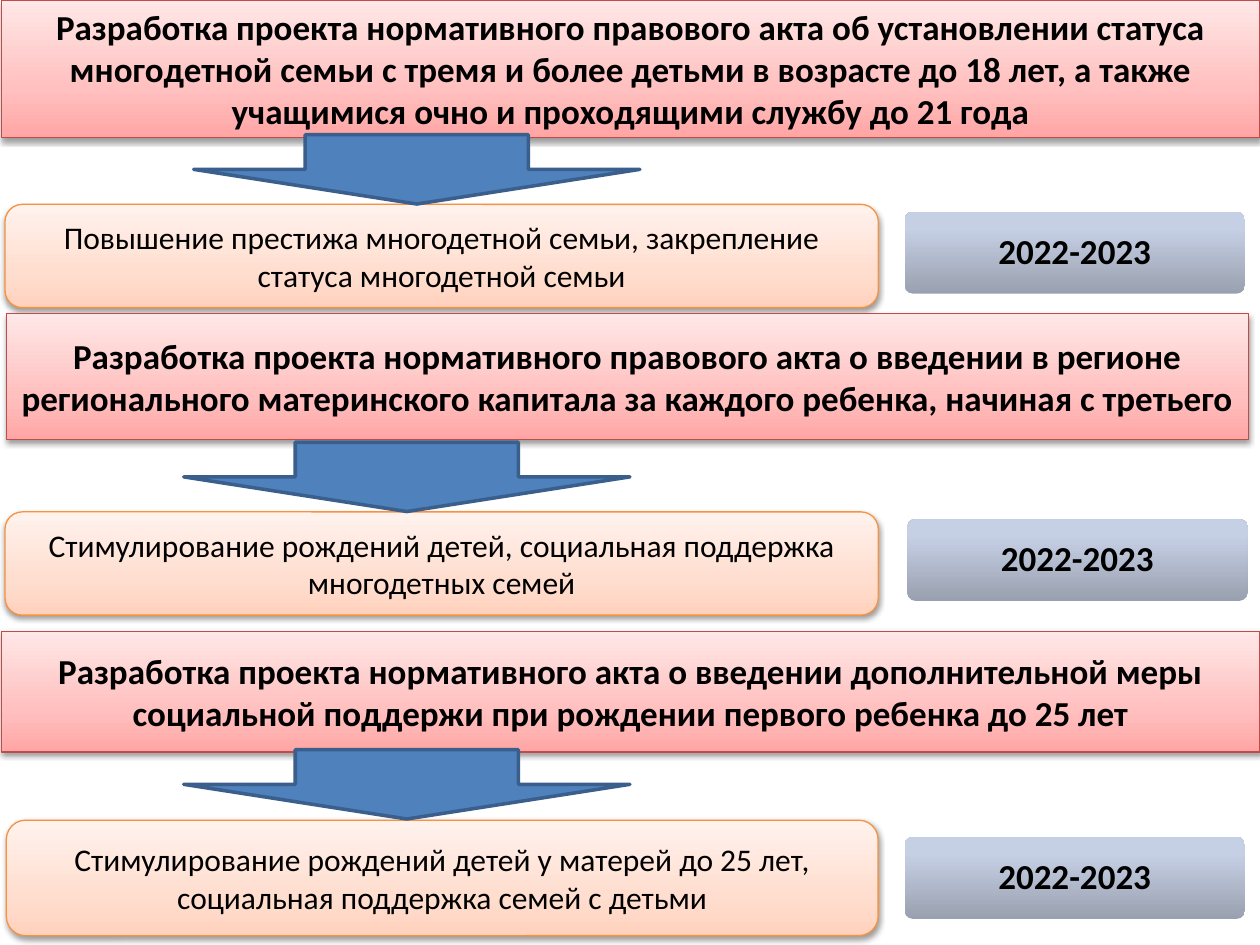
from lxml import etree
from pptx import Presentation
from pptx.dml.color import RGBColor
from pptx.enum.shapes import MSO_SHAPE
from pptx.enum.text import MSO_ANCHOR, PP_ALIGN
from pptx.oxml.ns import qn
from pptx.util import Pt

RECT = MSO_SHAPE.RECTANGLE
ROUND = MSO_SHAPE.ROUNDED_RECTANGLE
ARROW = MSO_SHAPE.DOWN_ARROW
MIDDLE = MSO_ANCHOR.MIDDLE
CENTER = PP_ALIGN.CENTER

COLORS = {"ink": "000000", "blue": "4F81BD", "navy": "3A5F8C",
          "red": "BF4C48", "orange": "F69240"}
# Gradient stops, from the bottom edge up
FADES = {
    "pink": [(0, "FFA6A5"), (35, "FFC0BF"), (100, "FFE7E7")],
    "peach": [(0, "FFD2BD"), (35, "FFDED0"), (100, "FFF2ED")],
    "steel": [(0, "99A0B0"), (80, "C6D0E4"), (100, "C6D1E6")],
}
STEP = 175.7  # distance from one arrow to the next
YEARS = "2022-2023"

# Each row: measure, its box, result, its box, left and top of the date, left of the arrow
ROWS = [
    ("Разработка проекта нормативного правового акта об установлении статуса "
     "многодетной семьи с тремя и более детьми в возрасте до 18 лет, а также "
     "учащимися очно и проходящими службу до 21 года", (0.7, 0, 719.3, 78.5),
     "Повышение престижа многодетной семьи, закрепление статуса многодетной семьи",
     (2.9, 116.8, 499, 59), (517, 121), 110.7),
    ("Разработка проекта нормативного правового акта о введении в регионе "
     "регионального материнского капитала за каждого ребенка, начиная с третьего",
     (3.6, 179.3, 709.9, 72),
     "Стимулирование рождений детей, социальная поддержка многодетных семей",
     (2.9, 292.5, 499, 59), (518.5, 296.6), 105),
    ("Разработка проекта нормативного акта о введении дополнительной меры "
     "социальной поддержи при рождении первого ребенка до 25 лет",
     (0.7, 360.7, 719.3, 69.1),
     "Стимулирование рождений детей у матерей до 25 лет, социальная поддержка "
     "семей с детьми", (3.6, 468.7, 498.2, 66), (517, 478.3), 105),
]


def write(shape, text, size=20, bold=False, color="ink", space=None):
    frame = shape.text_frame
    frame.word_wrap = True
    frame.vertical_anchor = MIDDLE
    para = frame.paragraphs[0]
    para.text = text
    para.alignment = CENTER
    para.line_spacing = space
    font = para.font
    font.name, font.size, font.bold = "Calibri", Pt(size), bold
    font.color.rgb = RGBColor.from_string(COLORS[color])


class Board:
    def __init__(self, slide):
        self.slide = slide

    def shape(self, kind, box, line=None, width=0.75):
        shape = self.slide.shapes.add_shape(kind, *map(Pt, box))
        shape.shadow.inherit = False
        if line:
            shape.line.color.rgb = RGBColor.from_string(COLORS[line])
            shape.line.width = Pt(width)
        else:
            shape.line.fill.background()
        return shape

    def fade(self, shape, name):
        shape.fill.background()
        props = shape.fill._xPr
        grad = etree.Element(qn("a:gradFill"), rotWithShape="1")
        stops = etree.SubElement(grad, qn("a:gsLst"))
        for pos, color in FADES[name]:
            stop = etree.SubElement(stops, qn("a:gs"), pos=str(pos * 1000))
            etree.SubElement(stop, qn("a:srgbClr"), val=color)
        etree.SubElement(grad, qn("a:lin"), ang="16200000", scaled="0")
        props.replace(props.find(qn("a:noFill")), grad)

    def shade(self, shape):
        list_ = shape.fill._xPr.find(qn("a:effectLst"))
        drop = etree.SubElement(list_, qn("a:outerShdw"), blurRad=str(Pt(3.1)),
                                dist=str(Pt(1.6)), dir="5400000", rotWithShape="0")
        color = etree.SubElement(drop, qn("a:srgbClr"), val=COLORS["ink"])
        etree.SubElement(color, qn("a:alpha"), val="38000")

    def bar(self, text, box):
        shape = self.shape(RECT, box, "red")
        self.fade(shape, "pink")
        self.shade(shape)
        write(shape, text, bold=True)

    def card(self, text, box):
        shape = self.shape(ROUND, box, "orange")
        self.fade(shape, "peach")
        self.shade(shape)
        write(shape, text, size=18)

    def date(self, text, spot):
        shape = self.shape(ROUND, (*spot, 194.4, 46.8))
        shape.adjustments[0] = 0.1
        self.fade(shape, "steel")
        write(shape, text, bold=True, space=0.9)

    def arrow(self, left, top):
        shape = self.shape(ARROW, (left, top, 255, 39.6), "navy", 2)
        shape.fill.solid()
        shape.fill.fore_color.rgb = RGBColor.from_string(COLORS["blue"])


def main():
    deck = Presentation()
    deck.slide_width, deck.slide_height = Pt(720), Pt(540)
    board = Board(deck.slides.add_slide(deck.slide_layouts[6]))

    # Measures with their results and dates
    for task, top, goal, low, spot, _ in ROWS:
        board.card(goal, low)
        board.bar(task, top)
        board.date(YEARS, spot)

    # Arrows lie over the boxes
    for i, row in enumerate(ROWS):
        board.arrow(row[-1], 77 + i * STEP)

    deck.save("out.pptx")


if __name__ == "__main__":
    main()
